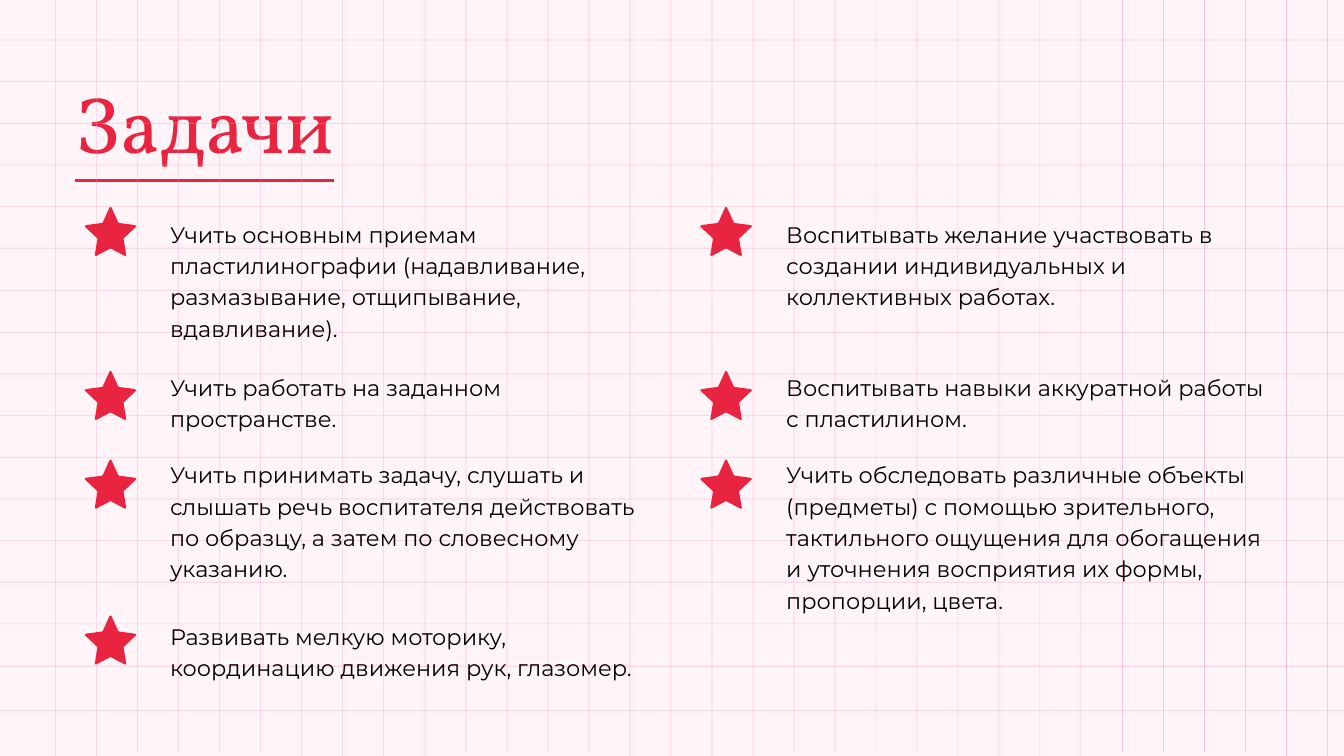
from lxml import etree
from pptx import Presentation
from pptx import util as u
from pptx.dml.color import RGBColor
from pptx.enum import shapes, text
from pptx.oxml.ns import qn

PX = 9144  # 100 px to the inch
COLORS = {"paper": "FFF5F9", "grid": "F899C0", "accent": "E82441", "ink": "000000"}
rgb = {name: RGBColor.from_string(c) for name, c in COLORS.items()}

prs = Presentation()
prs.slide_width, prs.slide_height = 2000 * PX, 1125 * PX
s = prs.slides.add_slide(prs.slide_layouts[5])
s.background.fill.solid()
s.background.fill.fore_color.rgb = rgb["paper"]


def paint(sp, color):
    sp.fill.solid()
    sp.fill.fore_color.rgb = rgb[color]
    sp.line.fill.background()
    sp.shadow.inherit = False


def format_text(sp, words, font, size, spacing, color):
    tf = sp.text_frame
    tf.word_wrap = True
    tf.auto_size = text.MSO_AUTO_SIZE.SHAPE_TO_FIT_TEXT
    tf.vertical_anchor = text.MSO_ANCHOR.TOP
    tf.margin_left = tf.margin_right = tf.margin_top = tf.margin_bottom = 0
    p = tf.paragraphs[0]
    p.text = words
    p.alignment = text.PP_ALIGN.LEFT
    p.line_spacing = u.Pt(spacing)
    p.font.name, p.font.size = font, u.Pt(size)
    p.font.color.rgb = rgb[color]
    return p


# Squared paper: 32 vertical and 17 horizontal hairlines
column_tops = [-23, -23, -35, -35, -35, -35, -26, -26]
row_lefts = [-42, -42, -31, -31]
row_tops = [59 + round(62.1 * i) for i in range(16)] + [1057]
grid = [(82 + round(61.06 * i), column_tops[i % 8], 1, 1154) for i in range(32)]
grid += [(row_lefts[i % 4], y, 2073, 1) for i, y in enumerate(row_tops)]
for box in grid:
    sp = s.shapes.add_shape(shapes.MSO_SHAPE.RECTANGLE, *(n * PX for n in box))
    paint(sp, "grid")
    clr = sp.fill._xPr.find(qn("a:solidFill"))[0]
    etree.SubElement(clr, qn("a:alpha"), val="50000")

# Title
title = s.shapes.title
title.left, title.top, title.width, title.height = (n * PX for n in (112, 121, 901, 133))
p = format_text(title, "Задачи", "Vollkorn", 85.6, 94.1, "accent")
p.font.underline = True

# Tasks: column, row, text height, wording
star_lefts, text_lefts = [126, 1042], [253, 1170]
star_tops, text_tops = [308, 552, 684, 916], [322, 550, 680, 920]
tasks = [
    (0, 0, 227, "Учить основным приемам пластилинографии (надавливание, размазывание, отщипывание, вдавливание)."),
    (0, 1, 135, "Учить работать на заданном пространстве."),
    (0, 2, 273, "Учить принимать задачу, слушать и слышать речь воспитателя действовать по образцу, а затем по словесному указанию."),
    (0, 3, 181, "Развивать мелкую моторику, координацию движения рук, глазомер."),
    (1, 0, 273, "Воспитывать желание участвовать в создании индивидуальных и коллективных работах."),
    (1, 1, 181, "Воспитывать навыки аккуратной работы с пластилином."),
    (1, 2, 273, "Учить обследовать различные объекты (предметы) с помощью зрительного, тактильного ощущения для обогащения и уточнения восприятия их формы, пропорции, цвета."),
]

# Star with blunted tips: right half, then its mirror image
STAR_W = 77
half = [(39, 0), (40, 1), (50, 23), (52, 24), (75, 27), (77, 29), (76, 30),
        (58, 47), (58, 48), (62, 72), (60, 73), (39, 62)]
star = half + [(STAR_W - x, y) for x, y in reversed(half)]

for col, row, height, words in tasks:
    left, top = star_lefts[col], star_tops[row]
    outline = [(left + x, top + y) for x, y in star]
    builder = s.shapes.build_freeform(*outline[0], scale=PX)
    builder.add_line_segments(outline[1:], close=True)
    paint(builder.convert_to_shape(), "accent")

    box = (text_lefts[col], text_tops[row], 725, height)
    sp = s.shapes.add_textbox(*(n * PX for n in box))
    format_text(sp, words, "Montserrat", 24, 33.6, "ink")

prs.save("out.pptx")
